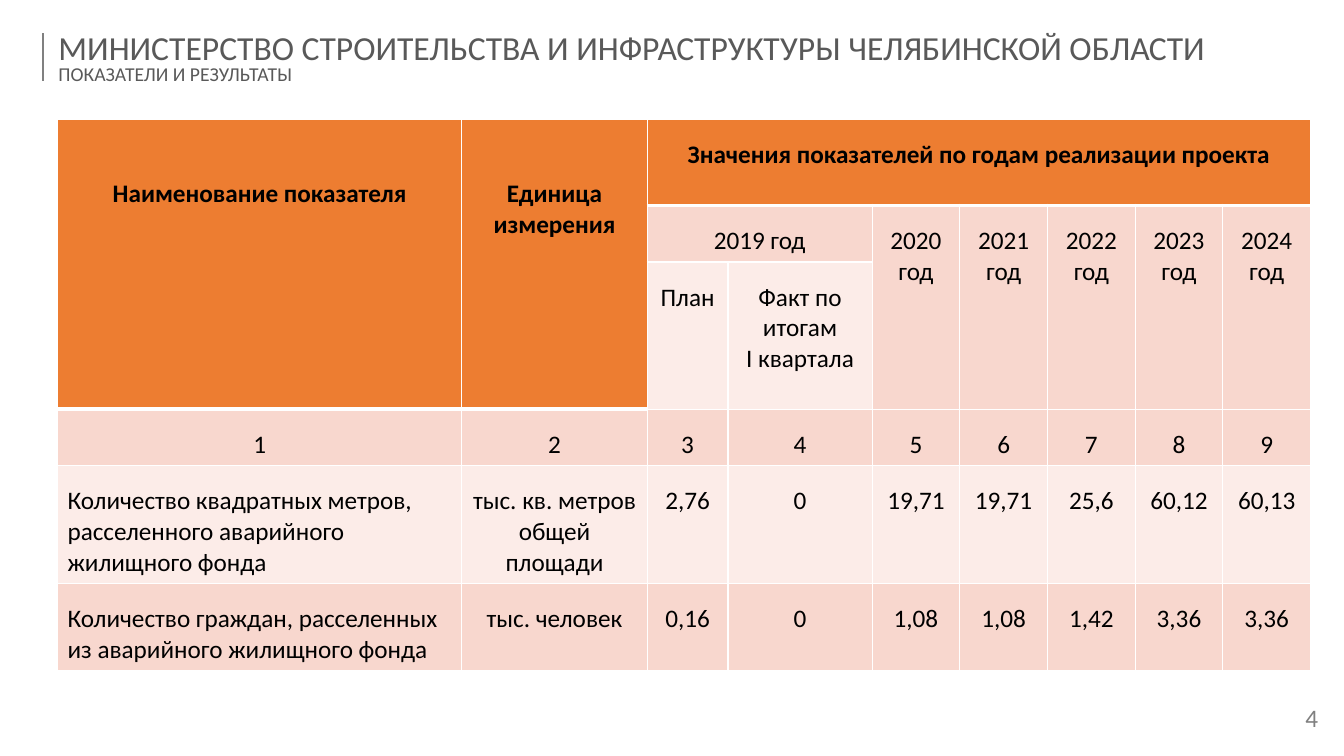
import dataclasses

import pptx
import pptx.dml.color
import pptx.enum.shapes
import pptx.enum.text
import pptx.oxml
import pptx.oxml.ns
import pptx.util

Inches = pptx.util.Inches
Pt = pptx.util.Pt
ALIGN = pptx.enum.text.PP_ALIGN
ANCHOR = pptx.enum.text.MSO_ANCHOR


@dataclasses.dataclass(frozen=True)
class Theme:
    font: str = "Calibri"
    title: str = "595959"
    muted: str = "808080"
    ink: str = "000000"
    rule: str = "FFFFFF"
    header: str = "ED7D31"
    band_dark: str = "F8D7CE"
    band_light: str = "FCECE8"
    title_size: int = 24
    subtitle_size: int = 14
    body_size: int = 18


def rgb(value):
    return pptx.dml.color.RGBColor.from_string(value)


def write(p, text, *, font, size, color, bold=False, align=ALIGN.LEFT, spacing=1.0):
    """Fill one paragraph; a newline in the text becomes a line break."""
    p.alignment = align
    p.line_spacing = spacing
    for i, line in enumerate(text.split("\n")):
        if i:
            p.add_line_break()
        r = p.add_run()
        r.text = line
        r.font.name = font
        r.font.size = Pt(size)
        r.font.bold = bold
        r.font.color.rgb = rgb(color)


class SlideBuilder:
    def __init__(self, prs, theme):
        self.theme = theme
        self.s = prs.slides.add_slide(prs.slide_layouts[5])

    def frame(self, sp):
        tf = sp.text_frame
        tf.word_wrap = True
        tf.auto_size = pptx.enum.text.MSO_AUTO_SIZE.NONE
        tf.vertical_anchor = ANCHOR.MIDDLE
        return tf

    def title(self, x, y, w, h, title, subtitle):
        t = self.theme
        sp = self.s.shapes.title
        sp.left, sp.top, sp.width, sp.height = map(Inches, (x, y, w, h))
        tf = self.frame(sp)
        style = dict(font=t.font, color=t.title, spacing=0.8)
        write(tf.paragraphs[0], title, size=t.title_size, **style)
        write(tf.add_paragraph(), subtitle, size=t.subtitle_size, **style)

    def text(self, x, y, w, h, text, **fmt):
        sp = self.s.shapes.add_textbox(*map(Inches, (x, y, w, h)))
        write(self.frame(sp).paragraphs[0], text, font=self.theme.font, **fmt)

    def line(self, x1, y1, x2, y2, color, width):
        sp = self.s.shapes.add_connector(
            pptx.enum.shapes.MSO_CONNECTOR.STRAIGHT, *map(Inches, (x1, y1, x2, y2)))
        sp.line.color.rgb = rgb(color)
        sp.line.width = Pt(width)
        sp._element.spPr.append(pptx.oxml.parse_xml(
            f'<a:effectLst {pptx.oxml.ns.nsdecls("a")}/>'))

    def borders(self, cell, **widths):
        tcPr = cell._tc.get_or_add_tcPr()
        for i, side in enumerate("LRTB"):
            tcPr.insert(i, pptx.oxml.parse_xml(
                f'<a:ln{side} {pptx.oxml.ns.nsdecls("a")} w="{Pt(widths.get(side, 1))}">'
                f'<a:solidFill><a:srgbClr val="{self.theme.rule}"/></a:solidFill>'
                f'</a:ln{side}>'))

    def table(self, x, y, cols, rows, values, spans):
        t = self.theme
        table = self.s.shapes.add_table(
            len(rows), len(cols), *map(Inches, (x, y, sum(cols), sum(rows)))).table
        table.first_row = table.horz_banding = False
        for col, width in zip(table.columns, cols):
            col.width = Inches(width)
        for row, height in zip(table.rows, rows):
            row.height = Inches(height)

        def is_header(r, c):
            return r == 0 or (r < 3 and c < 2)

        for r, line in enumerate(values):
            for c, value in enumerate(line):
                cell = table.cell(r, c)
                header = is_header(r, c)
                band = t.band_light if r in (2, 4) else t.band_dark
                cell.fill.solid()
                cell.fill.fore_color.rgb = rgb(t.header if header else band)
                below_header = r > 0 and not header and is_header(r - 1, c)
                self.borders(cell, T=3 if below_header else 1, B=3 if header else 1)
                cell.margin_left = cell.margin_right = Inches(0.1)
                cell.margin_top = Inches(0.59 if header and c < 2 else 0.2)
                cell.margin_bottom = Inches(0.05)
                if value:
                    left = r > 3 and c == 0
                    write(cell.text_frame.paragraphs[0], value, font=t.font,
                          size=t.body_size, color=t.ink, bold=header,
                          align=ALIGN.LEFT if left else ALIGN.CENTER)
        for (r, c), (down, across) in spans.items():
            table.cell(r, c).merge(table.cell(r + down - 1, c + across - 1))


def main():
    theme = Theme()
    prs = pptx.Presentation()
    prs.slide_width, prs.slide_height = Inches(13.33), Inches(7.5)
    slide = SlideBuilder(prs, theme)

    # Heading with its vertical rule
    slide.line(0.43, 0.33, 0.43, 0.8, theme.muted, 1.5)
    slide.title(0.48, 0.26, 12.8, 0.67,
                "МИНИСТЕРСТВО СТРОИТЕЛЬСТВА И ИНФРАСТРУКТУРЫ ЧЕЛЯБИНСКОЙ ОБЛАСТИ",
                "ПОКАЗАТЕЛИ И РЕЗУЛЬТАТЫ")

    # Indicators by year
    years = [f"{year} год" for year in range(2020, 2025)]
    values = [
        ["Наименование показателя", "Единица измерения",
         "Значения показателей по годам реализации проекта"] + [""] * 6,
        ["", "", "2019 год", ""] + years,
        ["", "", "План", "Факт по итогам\nI квартала"] + [""] * 5,
        [str(n) for n in range(1, 10)],
        ["Количество квадратных метров, расселенного аварийного жилищного фонда",
         "тыс. кв. метров общей площади",
         "2,76", "0", "19,71", "19,71", "25,6", "60,12", "60,13"],
        ["Количество граждан, расселенных из аварийного жилищного фонда",
         "тыс. человек", "0,16", "0", "1,08", "1,08", "1,42", "3,36", "3,36"],
    ]
    spans = {(0, 0): (3, 1), (0, 1): (3, 1), (0, 2): (1, 7), (1, 2): (1, 2)}
    spans.update({(1, c): (2, 1) for c in range(4, 9)})
    slide.table(0.57, 1.18, [4.01, 1.84, 0.8, 1.43] + [0.87] * 5,
                [0.86, 0.56, 1.46, 0.56, 1.17, 0.86], values, spans)

    # Page number
    slide.text(12.69, 6.9, 0.64, 0.5, "4", size=theme.body_size, color=theme.muted,
               align=ALIGN.CENTER, spacing=0.8)

    prs.save("out.pptx")


if __name__ == "__main__":
    main()
